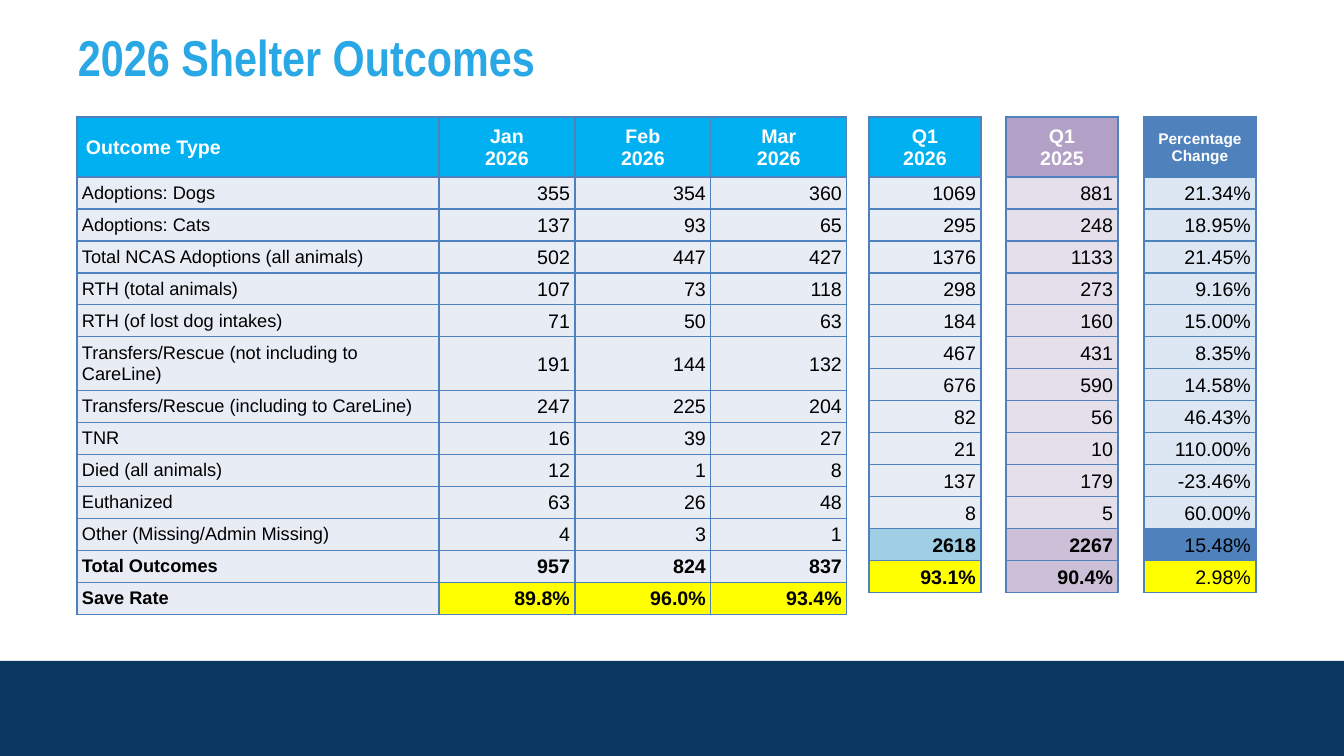
"""Build a slide of quarterly shelter outcomes with four aligned tables."""
from lxml.etree import SubElement
from pptx import Presentation
from pptx.dml.color import RGBColor
from pptx.enum.shapes import MSO_SHAPE
from pptx.enum.text import MSO_ANCHOR, PP_ALIGN
from pptx.oxml.ns import qn
from pptx.util import Pt

SLIDE_WIDTH, SLIDE_HEIGHT = 1344, 756
EMU_PER_PX = 12192000 / SLIDE_WIDTH
TABLE_TOP, HEADER_HEIGHT, ROW_HEIGHT = 117, 60, 32
COLUMN_WIDTH = 112

COLORS = {
    "title": "2AA7E5", "band": "0B3761", "border": "4F81BD",
    "white": "FFFFFF", "black": "000000", "cyan": "00B0F0",
    "pale": "E8ECF4", "sky": "A0CEE5", "yellow": "FFFF00",
    "purple": "B2A0C7", "lilac": "E5DFEC", "mauve": "CCC0D9",
    "blue": "4F81BD", "ice": "DDE7F3",
}

MONTHS = [
    ("Outcome Type", "Jan\n2026", "Feb\n2026", "Mar\n2026"),
    ("Adoptions: Dogs", "355", "354", "360"),
    ("Adoptions: Cats", "137", "93", "65"),
    ("Total NCAS Adoptions (all animals)", "502", "447", "427"),
    ("RTH (total animals)", "107", "73", "118"),
    ("RTH (of lost dog intakes)", "71", "50", "63"),
    ("Transfers/Rescue (not including to CareLine)", "191", "144", "132"),
    ("Transfers/Rescue (including to CareLine)", "247", "225", "204"),
    ("TNR", "16", "39", "27"),
    ("Died (all animals)", "12", "1", "8"),
    ("Euthanized", "63", "26", "48"),
    ("Other (Missing/Admin Missing)", "4", "3", "1"),
    ("Total Outcomes", "957", "824", "837"),
    ("Save Rate", "89.8%", "96.0%", "93.4%"),
]
QUARTER_2026 = ["Q1\n2026", "1069", "295", "1376", "298", "184", "467", "676",
                "82", "21", "137", "8", "2618", "93.1%"]
QUARTER_2025 = ["Q1\n2025", "881", "248", "1133", "273", "160", "431", "590",
                "56", "10", "179", "5", "2267", "90.4%"]
CHANGE = ["Percentage Change", "21.34%", "18.95%", "21.45%", "9.16%", "15.00%",
          "8.35%", "14.58%", "46.43%", "110.00%", "-23.46%", "60.00%",
          "15.48%", "2.98%"]


def px(length):
    """Turn pixels into EMU."""
    return round(length * EMU_PER_PX)


def color(name):
    """Look up a named colour."""
    return RGBColor.from_string(COLORS[name])


def style_font(font, size, color_name, bold, family="Arial"):
    """Set the look of a font."""
    font.name, font.size, font.bold = family, Pt(size), bold
    font.color.rgb = color(color_name)


def add_band(slide, top):
    """Add the dark band along the bottom edge."""
    band = slide.shapes.add_shape(MSO_SHAPE.RECTANGLE, 0, px(top),
                                  px(SLIDE_WIDTH), px(SLIDE_HEIGHT - top))
    band.shadow.inherit = False
    band.fill.solid()
    band.fill.fore_color.rgb = color("band")
    band.line.fill.background()


def add_title(slide, text):
    """Add the slide title."""
    box = slide.shapes.add_textbox(px(68), px(28), px(1210), px(56))
    frame = box.text_frame
    frame.word_wrap = True
    frame.vertical_anchor = MSO_ANCHOR.MIDDLE
    frame.text = text
    style_font(frame.paragraphs[0].font, 36, "title", True, "Arial Narrow")


def add_borders(cell):
    """Draw a thin line on all four sides of a cell."""
    properties = cell._tc.get_or_add_tcPr()
    for side in ("a:lnL", "a:lnR", "a:lnT", "a:lnB"):
        line = SubElement(properties, qn(side), w=str(Pt(1)))
        fill = SubElement(line, qn("a:solidFill"))
        SubElement(fill, qn("a:srgbClr"), val=COLORS["border"])


def fill_cell(cell, text, fill, margins, alignment, size, color_name, bold):
    """Write and style one table cell, with margins as left, top, right, bottom."""
    cell.text = text
    cell.vertical_anchor = MSO_ANCHOR.MIDDLE
    (cell.margin_left, cell.margin_top,
     cell.margin_right, cell.margin_bottom) = map(px, margins)
    add_borders(cell)
    cell.fill.solid()
    cell.fill.fore_color.rgb = color(fill)
    for paragraph in cell.text_frame.paragraphs:
        paragraph.alignment = alignment
        style_font(paragraph.font, size, color_name, bold)


def add_outcome_table(slide, left, widths, rows, fills, header_size=14,
                      bold_totals=True):
    """Add a table whose fills are header, body, total and save rate."""
    header_fill, body_fill, total_fill, rate_fill = fills
    row_fills = [header_fill, *[body_fill] * (len(rows) - 3), total_fill, rate_fill]
    height = HEADER_HEIGHT + ROW_HEIGHT * (len(rows) - 1)
    frame = slide.shapes.add_table(len(rows), len(widths), px(left), px(TABLE_TOP),
                                   px(sum(widths)), px(height))
    table = frame.table
    table.first_row = table.horz_banding = False
    for column, width in zip(table.columns, widths):
        column.width = px(width)
    for row_index, (values, fill) in enumerate(zip(rows, row_fills)):
        is_header = row_index == 0
        is_total = row_index >= len(rows) - 2
        table.rows[row_index].height = px(HEADER_HEIGHT if is_header else ROW_HEIGHT)
        for column_index, value in enumerate(values):
            is_label = len(values) > 1 and column_index == 0
            cell = table.cell(row_index, column_index)
            if is_header:
                alignment = PP_ALIGN.LEFT if is_label else PP_ALIGN.CENTER
                fill_cell(cell, value, fill, (9, 1, 9, 0), alignment,
                          header_size, "white", True)
            elif is_label:
                fill_cell(cell, value, body_fill, (5, 5, 5, 5), PP_ALIGN.LEFT,
                          13, "black", is_total)
            else:
                fill_cell(cell, value, fill, (1, 1, 5, 0), PP_ALIGN.RIGHT,
                          14, "black", is_total and bold_totals)


def add_column_table(slide, left, values, fills, **options):
    """Add a table of a single column."""
    add_outcome_table(slide, left, [COLUMN_WIDTH], [[value] for value in values],
                      fills, **options)


def main():
    """Build and save the slide."""
    presentation = Presentation()
    presentation.slide_width = px(SLIDE_WIDTH)
    presentation.slide_height = px(SLIDE_HEIGHT)
    slide = presentation.slides.add_slide(presentation.slide_layouts[6])
    add_band(slide, 661)
    add_title(slide, "2026 Shelter Outcomes")
    add_outcome_table(slide, 77, [362, 136, 136, 136], MONTHS,
                      ("cyan", "pale", "pale", "yellow"))
    add_column_table(slide, 869, QUARTER_2026, ("cyan", "pale", "sky", "yellow"))
    add_column_table(slide, 1006, QUARTER_2025, ("purple", "lilac", "mauve", "mauve"))
    add_column_table(slide, 1144, CHANGE, ("blue", "ice", "blue", "yellow"),
                     header_size=11, bold_totals=False)
    presentation.save("out.pptx")


if __name__ == "__main__":
    main()
